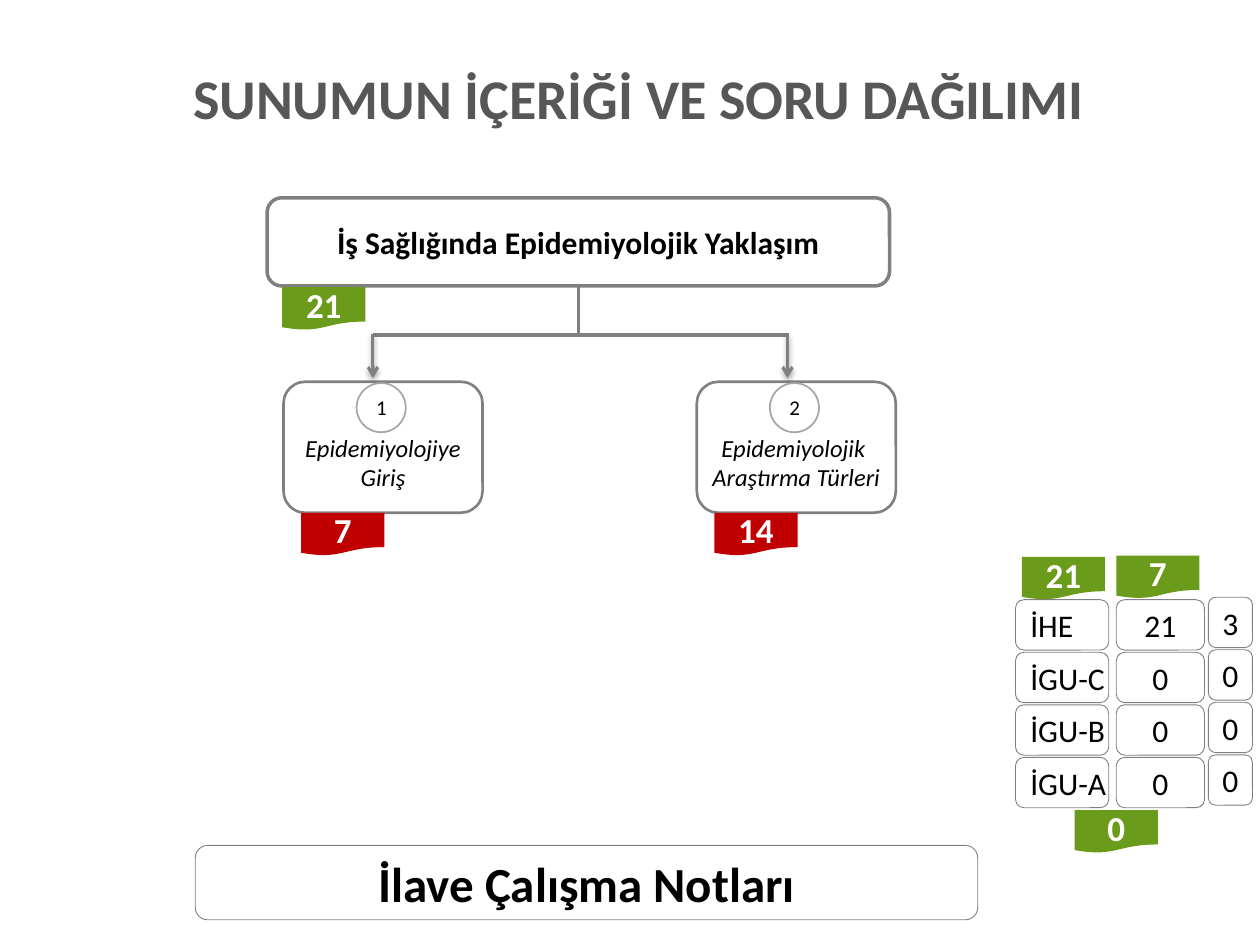
from lxml.etree import SubElement as Sub
from pptx import Presentation
from pptx.dml.color import RGBColor as Rgb
from pptx.enum.shapes import MSO_CONNECTOR as Link, MSO_SHAPE as Form
from pptx.enum.text import MSO_ANCHOR as Anchor, PP_ALIGN as Align
from pptx.oxml.ns import qn
from pptx.util import Inches, Pt

COLS, ROWS = 100, 75
UNIT = Inches(10) / COLS
HEX = {
    "black": "000000", "white": "FFFFFF", "ink": "575757", "edge": "808080",
    "ring": "A6A6A6", "green": "6B9B1A", "red": "C00000",
}


def cells(*nums):
    return [round(n * UNIT) for n in nums]


def hue(name):
    return Rgb.from_string(HEX[name])


def write(frame, lines, size, color, align=Align.CENTER, bold=False, slant=False):
    frame.vertical_anchor = Anchor.MIDDLE
    for i, text in enumerate(lines):
        para = frame.add_paragraph() if i else frame.paragraphs[0]
        para.alignment = align
        run = para.add_run()
        run.text = text
        font = run.font
        font.name, font.size = "Calibri", Pt(size)
        font.bold, font.italic = bold, slant
        font.color.rgb = hue(color)


def shape(slide, form, area, fill=None, edge=None, width=1):
    item = slide.shapes.add_shape(form, *cells(*area))
    item.shadow.inherit = False
    if fill:
        item.fill.solid()
        item.fill.fore_color.rgb = hue(fill)
    else:
        item.fill.background()
    if edge:
        item.line.color.rgb = hue(edge)
        item.line.width = Pt(width)
    else:
        item.line.fill.background()
    return item


def box(slide, area, lines, size, width, top=0.5, **style):
    item = shape(slide, Form.ROUNDED_RECTANGLE, area, edge="edge", width=width)
    frame = item.text_frame
    frame.word_wrap = False
    frame.margin_top, = cells(top)
    write(frame, lines, size, "black", **style)
    return item


def flag(slide, left, top, text, fill):
    item = shape(slide, Form.FLOWCHART_DOCUMENT, (left, top, 6.6, 3.4), fill)
    write(item.text_frame, [text], 20, "white", bold=True)


def badge(slide, left, top, text):
    item = shape(slide, Form.OVAL, (left, top, 3.9, 3.9), edge="ring")
    write(item.text_frame, [text], 12, "black")


def title(slide, area, text):
    frame = slide.shapes.add_textbox(*cells(*area)).text_frame
    frame.word_wrap = True
    frame.margin_left = frame.margin_right = 0
    write(frame, [text], 32, "ink", bold=True)
    frame.paragraphs[0].line_spacing = 0.9


def line(slide, ends, width, arrow=False):
    item = slide.shapes.add_connector(Link.STRAIGHT, *cells(*ends))
    item.line.color.rgb = hue("edge")
    item.line.width = Pt(width)
    props = item._element.spPr
    effect = Sub(props, qn("a:effectLst"))
    if arrow:
        Sub(props.find(qn("a:ln")), qn("a:tailEnd"), type="arrow")
        shade = Sub(effect, qn("a:outerShdw"), blurRad=str(Pt(3.1)),
                    dist=str(Pt(1.8)), dir="5400000", rotWithShape="0")
        tint = Sub(shade, qn("a:srgbClr"), val=HEX["black"])
        Sub(tint, qn("a:alpha"), val="35000")
    return item


def tree(slide):
    root = box(slide, (21.2, 15.7, 49.4, 7),
               ["İş Sağlığında Epidemiyolojik Yaklaşım"], 18, 2, bold=True)
    topics = [
        (22.5, "1", "7", ["Epidemiyolojiye", "Giriş"]),
        (55.3, "2", "14", ["Epidemiyolojik ", "Araştırma Türleri"]),
    ]
    for left, _, _, lines in topics:
        box(slide, (left, 30.3, 15.8, 10.4), lines, 14, 1.5, top=2.9, slant=True)
    line(slide, (29.6, 26.6, 62.6, 26.6), 2)
    for col in (29.6, 62.5):
        line(slide, (col, 26.5, col, 30), 1.75, arrow=True)
    stem = line(slide, (45.9, 22.7, 45.9, 26.5), 2)
    stem.begin_connect(root, 2)
    for left, mark, count, _ in topics:
        badge(slide, left + 5.8, 30.4, mark)
        flag(slide, left + 1.4, 40.7, count, "red")
    flag(slide, 22.4, 22.8, "21", "green")


def tally(slide):
    columns = [
        (80.6, 47.6, 7.4, Align.LEFT, ["İHE", "İGU-C", "İGU-B", "İGU-A"]),
        (88.6, 47.6, 7, Align.CENTER, ["21", "0", "0", "0"]),
        (95.9, 47.4, 3.5, Align.CENTER, ["3", "0", "0", "0"]),
    ]
    for left, top, wide, align, items in columns:
        for row, text in enumerate(items):
            area = (left, top + row * 4.17, wide, 4)
            box(slide, area, [text], 18, 0.5, align=align)
    for left, top, text in [(81.1, 44.2, "21"), (88.6, 44.1, "7"), (85.3, 64.3, "0")]:
        flag(slide, left, top, text, "green")


def main():
    deck = Presentation()
    deck.slide_width, deck.slide_height = cells(COLS, ROWS)
    slide = deck.slides.add_slide(deck.slide_layouts[6])
    title(slide, (2.5, 4.5, 96.4, 7.1), "SUNUMUN İÇERİĞİ VE SORU DAĞILIMI")
    tree(slide)
    tally(slide)
    box(slide, (15.5, 67.1, 62.1, 5.9), ["İlave Çalışma Notları"], 28, 0.5, bold=True)
    deck.save("out.pptx")


if __name__ == "__main__":
    main()
